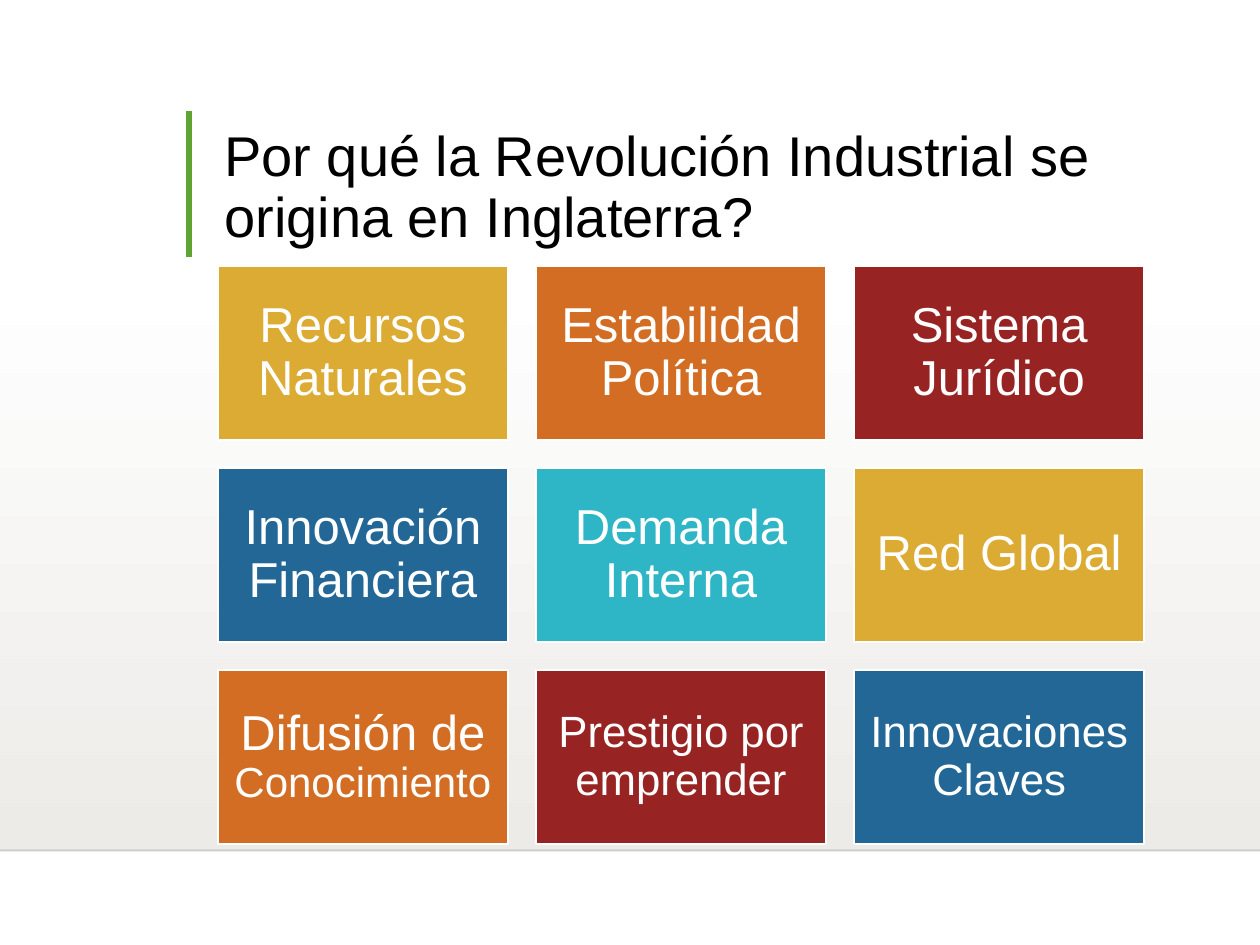
from lxml.etree import SubElement
from pptx import Presentation
from pptx.dml.color import RGBColor
from pptx.enum.shapes import MSO_CONNECTOR, MSO_SHAPE
from pptx.enum.text import MSO_ANCHOR, MSO_AUTO_SIZE, PP_ALIGN
from pptx.oxml.ns import qn
from pptx.util import Inches, Pt

WIDTH, HEIGHT = 10, 7.5
COLUMNS, GAP = 3, 0.225
FONT = "Arial"
WHITE, GOLD, ORANGE, RED = "FFFFFF", "DCAB34", "D26D23", "972323"
BLUE, TEAL, GREEN, SAND = "236797", "2FB6C6", "5FA534", "EDEBE7"

# Fill, inner margin, and runs as (text, size)
CAUSES = [
    (GOLD, 0.12, [("Recursos Naturales", 28)]),
    (ORANGE, 0.12, [("Estabilidad Política", 28)]),
    (RED, 0.12, [("Sistema Jurídico", 28)]),
    (BLUE, 0.12, [("Innovación Financiera", 28)]),
    (TEAL, 0.12, [("Demanda Interna", 28)]),
    (GOLD, 0.12, [("Red Global", 28)]),
    (ORANGE, 0.12, [("Difusión de ", 28), ("Conocimiento", 24)]),
    (RED, 0.1, [("Prestigio por emprender", 25)]),
    (BLUE, 0.1, [("Innovaciones Claves", 25)]),
]


def paint(color_format, value):
    color_format.rgb = RGBColor.from_string(value)


def add_run(paragraph, text, size, color):
    run = paragraph.add_run()
    run.text = text
    run.font.name, run.font.size = FONT, Pt(size)
    paint(run.font.color, color)


def add_rule(slide, start, end, color, weight):
    rule = slide.shapes.add_connector(
        MSO_CONNECTOR.STRAIGHT, *map(Inches, (*start, *end)))
    paint(rule.line.color, color)
    rule.line.width = Pt(weight)
    SubElement(rule._element.spPr, qn("a:effectLst"))
    return rule


def add_backdrop(slide, left, top, width, height):
    wall = slide.shapes.add_shape(
        MSO_SHAPE.RECTANGLE, *map(Inches, (left, top, width, height)))
    wall.shadow.inherit = False
    wall.line.fill.background()
    wall.fill.gradient()
    wall.fill.gradient_angle = 270
    for stop, color in zip(wall.fill.gradient_stops, (WHITE, SAND)):
        paint(stop.color, color)
    # Faint floor line under the wall
    floor = add_rule(slide, (left, top + height), (left + width, top + height),
                     "000001", 1)
    tint = floor.line._ln.find(".//" + qn("a:srgbClr"))
    SubElement(tint, qn("a:alpha"), val="20000")


def add_heading(slide, left, top, width, height):
    add_rule(slide, (left - 0.18, top), (left - 0.18, top + height + 0.01), GREEN, 3)
    title = slide.shapes.title
    title.left, title.top, title.width, title.height = map(
        Inches, (left, top, width, height))
    frame = title.text_frame
    frame.word_wrap = True
    frame.auto_size = MSO_AUTO_SIZE.NONE
    frame.vertical_anchor = MSO_ANCHOR.BOTTOM
    paragraph = frame.paragraphs[0]
    paragraph.alignment, paragraph.line_spacing = PP_ALIGN.LEFT, 0.9
    add_run(paragraph, "Por qué la Revolución Industrial se origina en Inglaterra?",
            32, "000000")


def add_cause(slide, box, fill, margin, runs):
    tile = slide.shapes.add_shape(MSO_SHAPE.RECTANGLE, *map(Inches, box))
    tile.shadow.inherit = False
    tile.fill.solid()
    paint(tile.fill.fore_color, fill)
    paint(tile.line.color, WHITE)
    tile.line.width = Pt(1.25)
    frame = tile.text_frame
    frame.word_wrap = True
    frame.vertical_anchor = MSO_ANCHOR.MIDDLE
    frame.margin_left = frame.margin_right = Inches(margin)
    frame.margin_top = frame.margin_bottom = Inches(margin)
    paragraph = frame.paragraphs[0]
    paragraph.alignment, paragraph.line_spacing = PP_ALIGN.CENTER, 0.9
    for text, size in runs:
        add_run(paragraph, text, size, WHITE)


def add_cause_grid(slide, left, top, width, height):
    rows = len(CAUSES) // COLUMNS
    tile_w = (width - GAP * (COLUMNS - 1)) / COLUMNS
    tile_h = (height - GAP * (rows - 1)) / rows
    for index, cause in enumerate(CAUSES):
        row, column = divmod(index, COLUMNS)
        box = (left + column * (tile_w + GAP), top + row * (tile_h + GAP),
               tile_w, tile_h)
        add_cause(slide, box, *cause)


def main():
    deck = Presentation()
    deck.slide_width, deck.slide_height = Inches(WIDTH), Inches(HEIGHT)
    slide = deck.slides.add_slide(deck.slide_layouts[5])
    add_backdrop(slide, 0, 2.2, WIDTH, 4.55)
    add_heading(slide, 1.68, 0.88, 7.09, 1.15)
    add_cause_grid(slide, 1.73, 2.11, 7.35, 4.59)
    deck.save("out.pptx")


if __name__ == "__main__":
    main()
